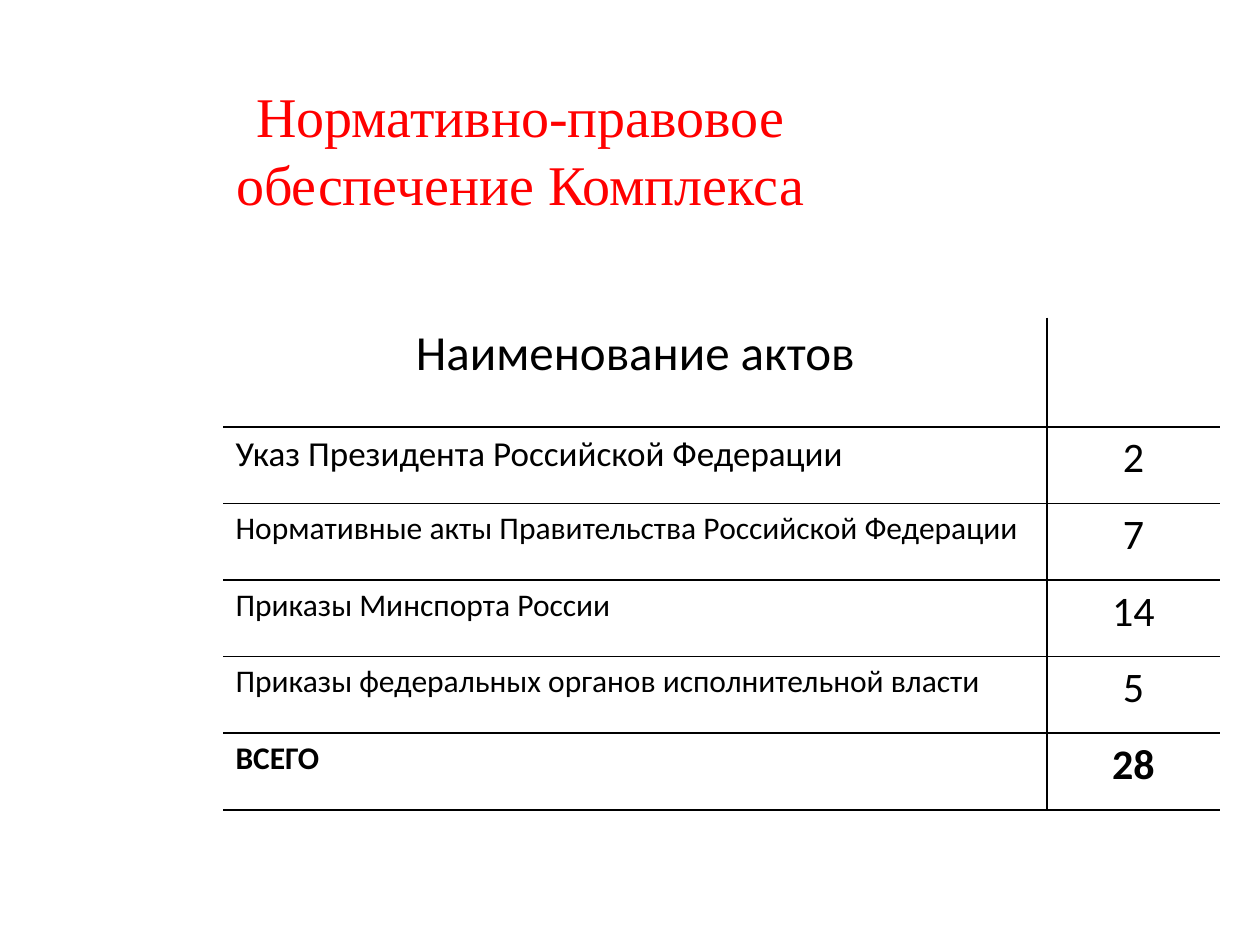
from lxml.etree import SubElement
from pptx import Presentation
from pptx.dml.color import RGBColor
from pptx.enum.text import MSO_ANCHOR, MSO_AUTO_SIZE, PP_ALIGN
from pptx.oxml.ns import qn
from pptx.util import Inches, Pt

RED = RGBColor(0xFF, 0x00, 0x00)
BLACK = RGBColor(0x00, 0x00, 0x00)
WIDTH, HEIGHT = Inches(10), Inches(7.5)
LEFT = 0.177
NAME_SHARE = 0.827
HEADER_SHARE = 0.222

ACTS = [
    ("Наименование актов", "", 28, False),
    ("Указ Президента Российской Федерации", "2", 20, False),
    ("Нормативные акты Правительства Российской Федерации", "7", 18, False),
    ("Приказы Минспорта России", "14", 18, False),
    ("Приказы федеральных органов исполнительной власти", "5", 18, False),
    ("ВСЕГО", "28", 18, True),
]


def share_box(left, top, width, height):
    return (int(left * WIDTH), int(top * HEIGHT),
            int(width * WIDTH), int(height * HEIGHT))


def write_text(tf, text, size, font="Calibri", color=BLACK, bold=False,
               align=PP_ALIGN.LEFT):
    p = tf.paragraphs[0]
    p.alignment = align
    p.font.size = Pt(size)
    if text:
        r = p.add_run()
        r.text = text
        r.font.name = font
        r.font.size = Pt(size)
        r.font.bold = bold
        r.font.color.rgb = color


def set_borders(cell, visible):
    tcPr = cell._tc.get_or_add_tcPr()
    for side in "LRTB":
        ln = SubElement(tcPr, qn(f"a:ln{side}"), w=str(Pt(1)))
        if side in visible:
            fill = SubElement(ln, qn("a:solidFill"))
            SubElement(fill, qn("a:srgbClr"), val=str(BLACK))
        else:
            SubElement(ln, qn("a:noFill"))


def add_title(s, box):
    title = s.shapes.title
    title.left, title.top, title.width, title.height = box
    tf = title.text_frame
    tf.word_wrap = True
    tf.auto_size = MSO_AUTO_SIZE.SHAPE_TO_FIT_TEXT
    tf.vertical_anchor = MSO_ANCHOR.TOP
    write_text(tf, "Нормативно-правовое обеспечение Комплекса", 32,
               font="Times New Roman", color=RED, align=PP_ALIGN.CENTER)


def add_acts_table(s, box):
    table = s.shapes.add_table(len(ACTS), 2, *box).table
    table.first_row = table.horz_banding = False
    width, height = box[2:]
    table.columns[0].width = int(width * NAME_SHARE)
    table.columns[1].width = width - table.columns[0].width
    header = int(height * HEADER_SHARE)
    body = (height - header) // (len(ACTS) - 1)
    for i, (name, count, size, bold) in enumerate(ACTS):
        table.rows[i].height = body if i else header
        align = PP_ALIGN.LEFT if i else PP_ALIGN.CENTER
        name_cell, count_cell = table.cell(i, 0), table.cell(i, 1)
        write_text(name_cell.text_frame, name, size, bold=bold, align=align)
        write_text(count_cell.text_frame, count, 24, bold=bold,
                   align=PP_ALIGN.CENTER)
        top = "T" if i else ""
        set_borders(name_cell, "RB" + top)
        set_borders(count_cell, "LB" + top)
        for cell in (name_cell, count_cell):
            cell.fill.background()


def main():
    prs = Presentation()
    prs.slide_width, prs.slide_height = WIDTH, HEIGHT
    s = prs.slides.add_slide(prs.slide_layouts[5])
    add_title(s, share_box(LEFT, 0.08, 0.472, 0.157))
    add_acts_table(s, share_box(LEFT, 0.336, 0.791, 0.521))
    prs.save("out.pptx")


if __name__ == "__main__":
    main()
